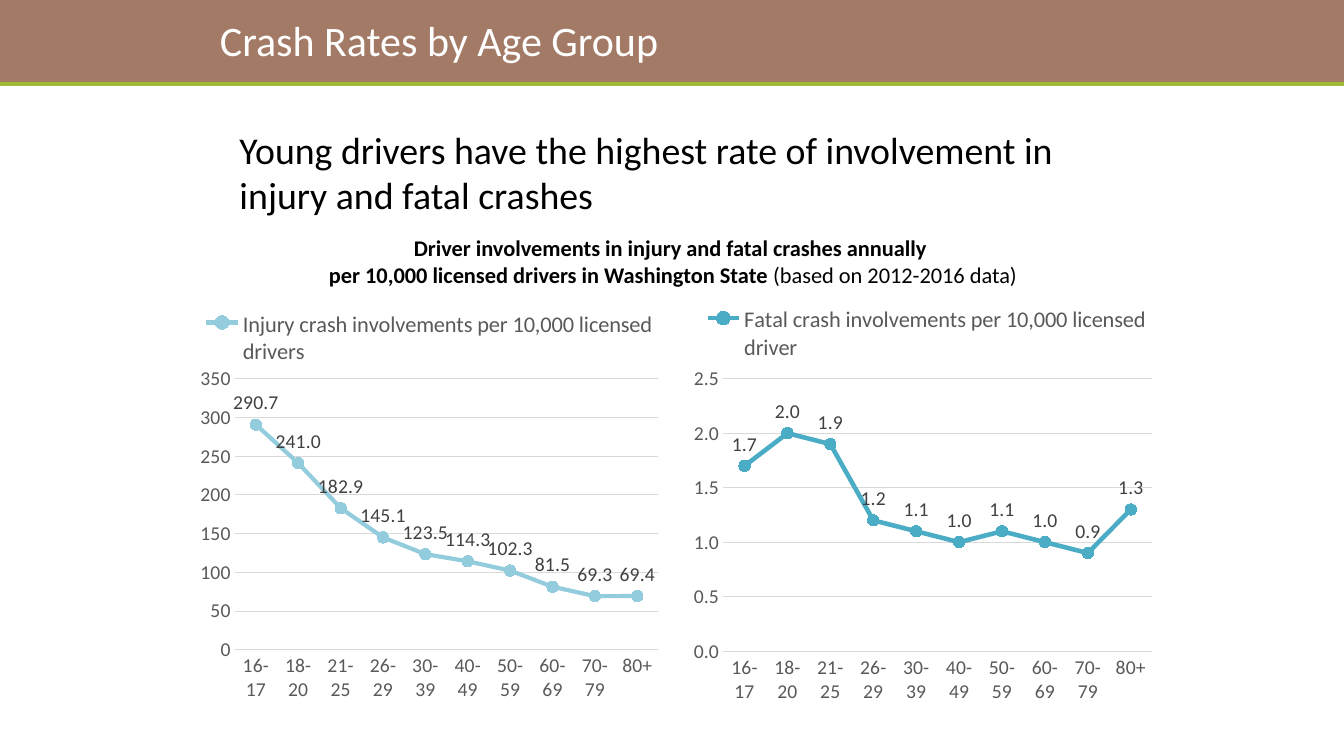
import dataclasses

import lxml.etree
import pptx
import pptx.chart.data
import pptx.dml.color
import pptx.enum.chart
import pptx.enum.shapes
import pptx.enum.text
import pptx.oxml.ns
import pptx.util

Pt = pptx.util.Pt
qn = pptx.oxml.ns.qn
Align = pptx.enum.text.PP_ALIGN
Anchor = pptx.enum.text.MSO_ANCHOR


@dataclasses.dataclass(frozen=True)
class Theme:
    font: str = "Calibri"
    band: str = "A37A66"
    rule: str = "A0BA35"
    white: str = "FFFFFF"
    black: str = "000000"
    axis_text: str = "595959"
    label_text: str = "404040"
    grid: str = "D9D9D9"
    injury: str = "93CDDD"
    fatal: str = "4BACC6"
    heading_size: float = 30
    message_size: float = 27
    caption_size: float = 16
    legend_size: float = 16
    axis_size: float = 14


def color(value):
    return pptx.dml.color.RGBColor.from_string(value)


def apply(target, formats):
    for name, value in formats.items():
        setattr(target, name, value)


class SlideBuilder:
    def __init__(self, slide, theme):
        self.slide = slide
        self.theme = theme

    def set_font(self, font, size, font_color, bold=False):
        apply(font, {"name": self.theme.font, "size": Pt(size), "bold": bold})
        font.color.rgb = color(font_color)

    def set_line(self, line, line_color, width):
        line.color.rgb = color(line_color)
        line.width = Pt(width)

    def add_band(self, box, fill):
        shape = self.slide.shapes.add_shape(
            pptx.enum.shapes.MSO_SHAPE.RECTANGLE, *map(Pt, box))
        shape.shadow.inherit = False
        shape.fill.solid()
        shape.fill.fore_color.rgb = color(fill)
        shape.line.fill.background()

    def add_rule(self, ends, line_color, width):
        connector = self.slide.shapes.add_connector(
            pptx.enum.shapes.MSO_CONNECTOR.STRAIGHT, *map(Pt, ends))
        self.set_line(connector.line, line_color, width)
        lxml.etree.SubElement(connector._element.spPr, qn("a:effectLst"))

    def add_text(self, box, paragraphs, size, font_color,
                 align=Align.LEFT, anchor=Anchor.MIDDLE):
        frame = self.slide.shapes.add_textbox(*map(Pt, box)).text_frame
        apply(frame, {"word_wrap": True, "vertical_anchor": anchor})
        for index, runs in enumerate(paragraphs):
            paragraph = frame.add_paragraph() if index else frame.paragraphs[0]
            paragraph.alignment = align
            for text, bold in runs:
                run = paragraph.add_run()
                run.text = text
                self.set_font(run.font, size, font_color, bold)

    def set_layout(self, parent, position, box, inner=False):
        for old_layout in parent.findall(qn("c:layout")):
            parent.remove(old_layout)
        layout = lxml.etree.Element(qn("c:layout"))
        manual = lxml.etree.SubElement(layout, qn("c:manualLayout"))
        settings = [("layoutTarget", "inner")] if inner else []
        settings += [("xMode", "edge"), ("yMode", "edge"), *zip("xywh", box)]
        for name, value in settings:
            lxml.etree.SubElement(manual, qn("c:" + name), val=str(value))
        parent.insert(position, layout)

    def add_rate_chart(self, box, name, ages, rates, series_color, width,
                       maximum, step, axis_format, plot_box, legend_box):
        theme = self.theme
        enums = pptx.enum.chart
        data = pptx.chart.data.CategoryChartData()
        data.categories = ages
        data.add_series(name, rates)
        chart = self.slide.shapes.add_chart(
            enums.XL_CHART_TYPE.LINE_MARKERS, *map(Pt, box), data).chart
        apply(chart, {"has_title": False, "has_legend": True})
        self.set_font(chart.font, theme.axis_size, theme.axis_text)

        apply(chart.legend, {"position": enums.XL_LEGEND_POSITION.TOP,
                             "include_in_layout": False})
        self.set_font(chart.legend.font, theme.legend_size, theme.axis_text)
        self.set_layout(chart.legend._element, 1, legend_box)
        self.set_layout(chart._chartSpace.chart.plotArea, 0, plot_box, True)

        for axis in (chart.category_axis, chart.value_axis):
            apply(axis, {"major_tick_mark": enums.XL_TICK_MARK.NONE,
                         "minor_tick_mark": enums.XL_TICK_MARK.NONE})
            self.set_font(axis.tick_labels.font, theme.axis_size, theme.axis_text)
        self.set_line(chart.category_axis.format.line, theme.grid, 0.75)
        apply(chart.value_axis, {"minimum_scale": 0, "maximum_scale": maximum,
                                 "major_unit": step, "has_major_gridlines": True})
        chart.value_axis.format.line.fill.background()
        self.set_line(chart.value_axis.major_gridlines.format.line, theme.grid, 0.75)
        apply(chart.value_axis.tick_labels,
              {"number_format": axis_format, "number_format_is_linked": False})

        plot = chart.plots[0]
        plot.vary_by_categories = False
        series = plot.series[0]
        series.smooth = False
        self.set_line(series.format.line, series_color, width)
        apply(series.marker, {"style": enums.XL_MARKER_STYLE.CIRCLE, "size": 8})
        series.marker.format.fill.solid()
        series.marker.format.fill.fore_color.rgb = color(series_color)
        self.set_line(series.marker.format.line, series_color, 0.75)
        labels = series.data_labels
        apply(labels, {"show_value": True, "number_format": "#,##0.0",
                       "number_format_is_linked": False,
                       "position": enums.XL_LABEL_POSITION.ABOVE})
        self.set_font(labels.font, theme.axis_size, theme.label_text)


def main():
    presentation = pptx.Presentation()
    apply(presentation, {"slide_width": Pt(960), "slide_height": Pt(540)})
    theme = Theme()
    builder = SlideBuilder(
        presentation.slides.add_slide(presentation.slide_layouts[6]), theme)

    builder.add_band((0, 0, 960, 60), theme.band)
    builder.add_rule((0, 60, 960, 60), theme.rule, 3)
    builder.add_text((164, 83.5, 621, 78.5), [[(
        "Young drivers have the highest rate of involvement in "
        "injury and fatal crashes", False)]], theme.message_size, theme.black)

    ages = ["16-17", "18-20", "21-25", "26-29", "30-39",
            "40-49", "50-59", "60-69", "70-79", "80+"]
    builder.add_rate_chart(
        (132, 208, 342.5, 308),
        "Injury crash involvements per 10,000 licensed drivers", ages,
        [290.7, 241.0, 182.9, 145.1, 123.5, 114.3, 102.3, 81.5, 69.3, 69.4],
        theme.injury, 3, 350, 50, "#,##0",
        (0.104, 0.203, 0.884, 0.629), (0.03, 0.04, 0.96, 0.14))
    builder.add_rate_chart(
        (484.5, 208, 348, 308),
        "Fatal crash involvements per 10,000 licensed driver", ages,
        [1.7, 2.0, 1.9, 1.2, 1.1, 1.0, 1.1, 1.0, 0.9, 1.3],
        theme.fatal, 3.25, 2.5, 0.5, "#,##0.0",
        (0.092, 0.203, 0.881, 0.632), (0.04, 0.03, 0.94, 0.14))

    builder.add_text(
        (164, 164, 633.5, 46),
        [[("Driver involvements in injury and fatal crashes annually ", True)],
         [("per 10,000 licensed drivers in Washington State ", True),
          ("(based on 2012-2016 data)", False)]],
        theme.caption_size, theme.black, Align.CENTER, Anchor.TOP)
    builder.add_text((150, 12, 492, 32.5), [[("Crash Rates by Age Group", False)]],
                     theme.heading_size, theme.white)
    presentation.save("out.pptx")


if __name__ == "__main__":
    main()
